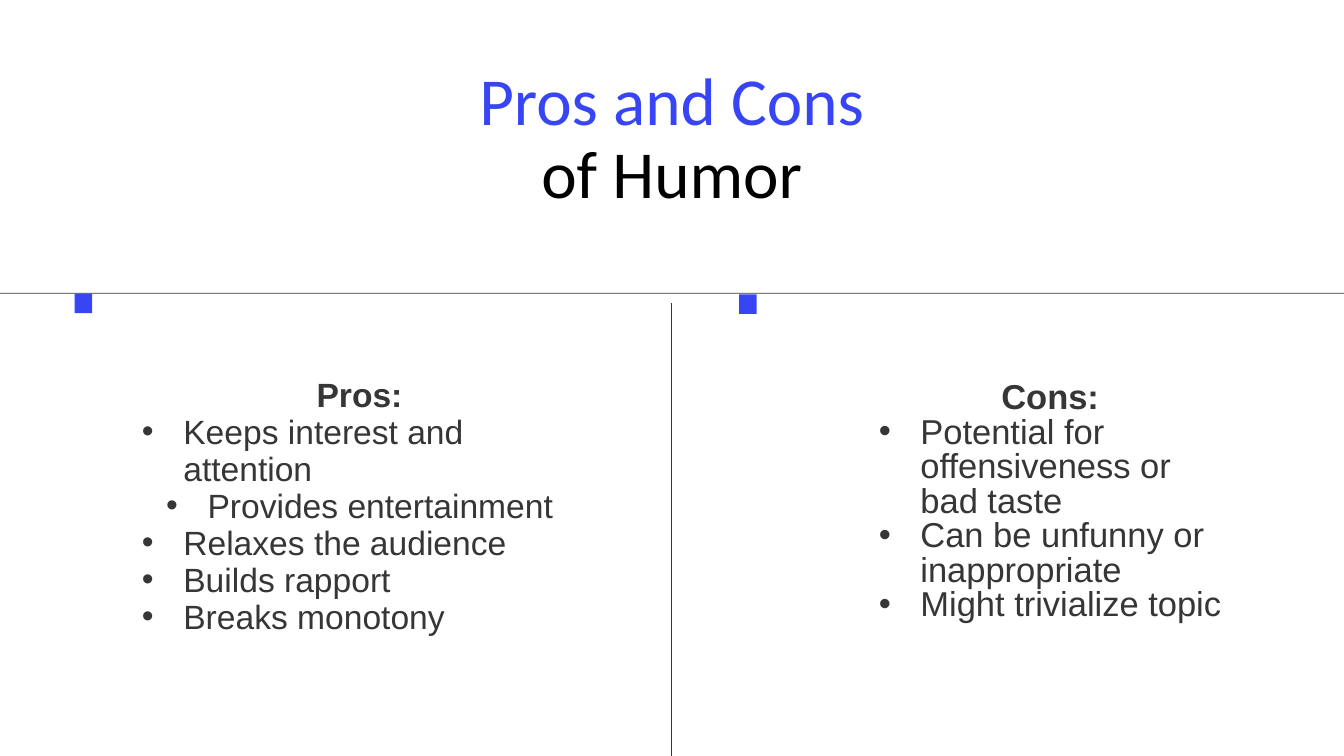
from lxml import etree
from pptx import Presentation
from pptx.dml.color import RGBColor
from pptx.enum.shapes import MSO_SHAPE
from pptx.enum.text import MSO_ANCHOR, MSO_AUTO_SIZE, PP_ALIGN
from pptx.oxml.ns import qn
from pptx.util import Cm, Pt

RECTANGLE = MSO_SHAPE.RECTANGLE
TOP = MSO_ANCHOR.TOP
NO_AUTOFIT = MSO_AUTO_SIZE.NONE
LEFT, CENTER = PP_ALIGN.LEFT, PP_ALIGN.CENTER

PAGE_WIDTH, PAGE_HEIGHT = 50.8, 28.58
BLUE, GRAY, BLACK = "3745F4", "373636", "000000"
RULE_WIDTH = 0.03
RULE_TOP = 11.07
BULLET_INDENT = 1.57

PROS = [
    ("Keeps interest and attention", LEFT),
    ("Provides entertainment", CENTER),
    ("Relaxes the audience", LEFT),
    ("Builds rapport", LEFT),
    ("Breaks monotony", LEFT),
]
CONS = [
    ("Potential for offensiveness or bad taste", LEFT),
    ("Can be unfunny or inappropriate", LEFT),
    ("Might trivialize topic", LEFT),
]


def color(value):
    """Turn a hex string into a colour."""
    return RGBColor.from_string(value)


def place_text(holder, box):
    """Move a placeholder to its box and return its cleared text frame."""
    holder.left, holder.top, holder.width, holder.height = map(Cm, box)
    frame = holder.text_frame
    frame.margin_left = frame.margin_top = 0
    frame.margin_right = frame.margin_bottom = 0
    frame.word_wrap = True
    frame.auto_size = NO_AUTOFIT
    frame.vertical_anchor = TOP
    return frame


def format_para(para, align, spacing):
    """Set the alignment and exact line spacing of a paragraph."""
    para.alignment = align
    para.line_spacing = Pt(spacing)
    para.space_before = para.space_after = Pt(0)


def add_span(para, text, font, size, fill, bold=False):
    """Add one formatted run to a paragraph."""
    span = para.add_run()
    span.text = text
    span.font.name = font
    span.font.size = Pt(size)
    span.font.bold = bold
    span.font.color.rgb = color(fill)


def set_bullet(para, bullet):
    """Give a paragraph a hanging bullet, or remove the inherited one."""
    props = para._p.get_or_add_pPr()
    indent = Cm(BULLET_INDENT) if bullet else 0
    props.set("marL", str(indent))
    props.set("indent", str(-indent))
    if bullet:
        etree.SubElement(props, qn("a:buChar")).set("char", bullet)
    else:
        etree.SubElement(props, qn("a:buNone"))


def add_block(page, box, fill):
    """Add a plain filled rectangle."""
    block = page.shapes.add_shape(RECTANGLE, *map(Cm, box))
    block.shadow.inherit = False
    block.fill.solid()
    block.fill.fore_color.rgb = color(fill)
    block.line.fill.background()


def fill_title(holder, box):
    """Write the two-colour title."""
    para = place_text(holder, box).paragraphs[0]
    format_para(para, CENTER, 79.2)
    add_span(para, "Pros and Cons", "Calibri", 72, BLUE)
    para.add_line_break()
    add_span(para, "of Humor", "Calibri", 72, BLACK)


def fill_list(holder, box, heading, items, size, spacing):
    """Write a bold heading with its bulleted points."""
    frame = place_text(holder, box)
    para = frame.paragraphs[0]
    format_para(para, CENTER, spacing)
    set_bullet(para, None)
    add_span(para, heading, "Arial", size, GRAY, bold=True)
    for text, align in items:
        para = frame.add_paragraph()
        format_para(para, align, spacing)
        set_bullet(para, "•")
        add_span(para, text, "Arial", size, GRAY)


def add_dividers(page):
    """Draw the rules between the regions and the marker of each column."""
    add_block(page, (0, RULE_TOP, PAGE_WIDTH, RULE_WIDTH), GRAY)
    column_top = 11.46
    add_block(page, (25.37, column_top, RULE_WIDTH, PAGE_HEIGHT - column_top), GRAY)
    for left, top in ((2.82, 11.1), (27.94, 11.13)):
        add_block(page, (left, top, 0.66, 0.74), BLUE)


def main():
    """Build and save the slide."""
    deck = Presentation()
    deck.slide_width, deck.slide_height = Cm(PAGE_WIDTH), Cm(PAGE_HEIGHT)
    page = deck.slides.add_slide(deck.slide_layouts.get_by_name("Two Content"))
    title, pros, cons = page.placeholders
    fill_title(title, (9.73, 2.44, 31.32, 8.43))
    add_dividers(page)
    fill_list(pros, (5.36, 14.27, 16.46, 12.83), "Pros:", PROS, 36, 39.6)
    fill_list(cons, (33.22, 14.45, 13.31, 13.18), "Cons: ", CONS, 37, 37)
    deck.save("out.pptx")


if __name__ == "__main__":
    main()
